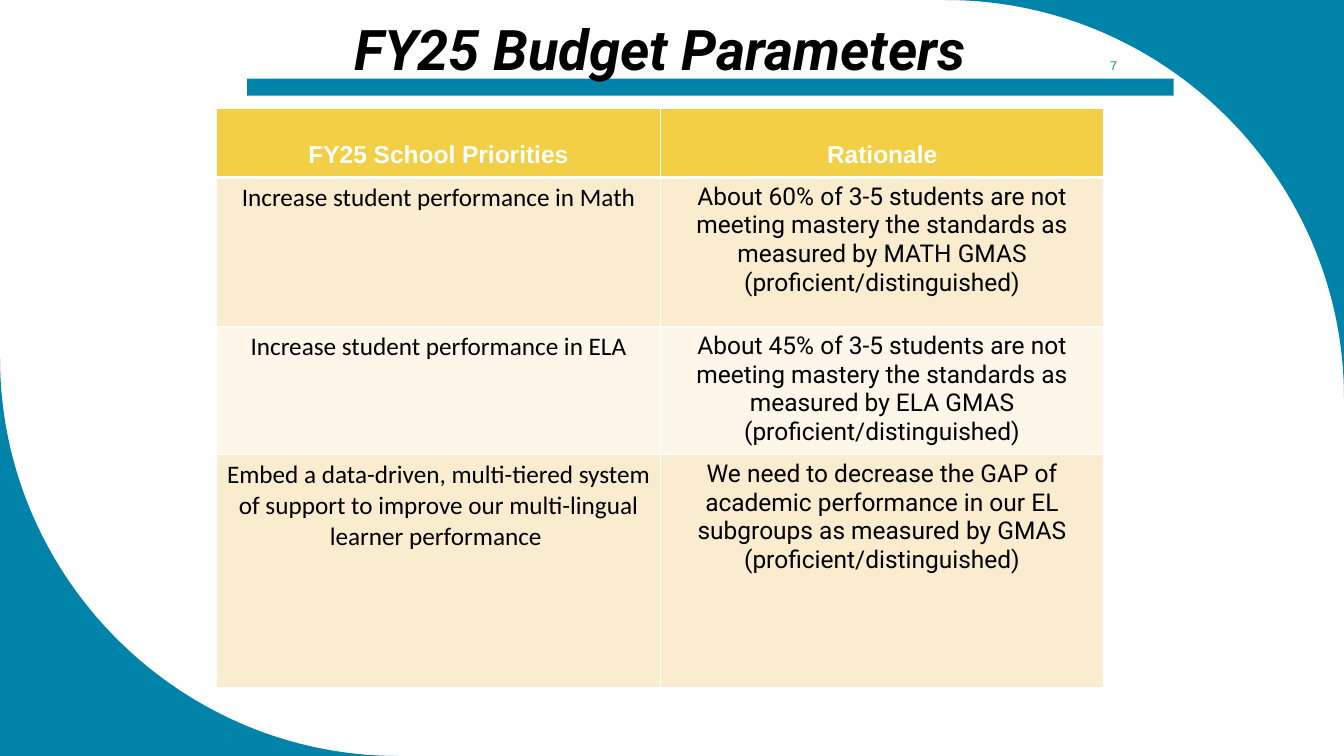
from lxml.etree import SubElement
from pptx import Presentation
from pptx.dml.color import RGBColor
from pptx.enum.shapes import MSO_SHAPE
from pptx.enum.text import MSO_ANCHOR, PP_ALIGN
from pptx.oxml.ns import qn
from pptx.util import Inches, Pt

W, H = 13.33, 7.5
TEAL, GOLD, GREEN = "0083A9", "F3CF45", "159839"
CREAM, PALE = "FAEDCF", "FDF6E9"
WHITE, BLACK = "FFFFFF", "000000"
CORNER_RADIUS = 3.95
ARC_PULL = 0.55  # share of the radius from an arc's end to its control point

COLUMN_WIDTH = 4.4
ROW_HEIGHTS = (0.68, 1.48, 1.27, 2.31)
HEADINGS = ("FY25 School Priorities", "Rationale")
PRIORITIES = (
    ("Increase student performance in Math",
     "About 60% of 3-5 students are not meeting mastery the standards "
     "as measured by MATH GMAS (proficient/distinguished)"),
    ("Increase student performance in ELA",
     "About 45% of 3-5 students are not meeting mastery the standards "
     "as measured by ELA GMAS (proficient/distinguished)"),
    ("Embed a data-driven, multi-tiered system of support to improve our "
     "multi-lingual learner performance ",
     "We need to decrease the GAP of academic performance in our EL "
     "subgroups as measured by GMAS (proficient/distinguished)"),
)


def rgb(color):
    return RGBColor.from_string(color)


def paint(sp, color):
    sp.shadow.inherit = False
    sp.fill.solid()
    sp.fill.fore_color.rgb = rgb(color)
    sp.line.fill.background()


def write(tf, text, font, size, color, bold=False, italic=False):
    p = tf.paragraphs[0]
    p.text = text
    p.alignment = PP_ALIGN.CENTER
    f = p.font
    f.name, f.size, f.bold, f.italic = font, Pt(size), bold, italic
    f.color.rgb = rgb(color)


def add_corner(slide, x, y, dx, dy):
    """Fill the area between the slide corner (x, y) and a quarter circle."""
    corner = Inches(x), Inches(y)
    radius = Inches(CORNER_RADIUS)
    ends = [(corner[0] + dx * radius, corner[1]),
            (corner[0], corner[1] + dy * radius)]
    builder = slide.shapes.build_freeform(*corner)
    builder.add_line_segments(ends, close=True)
    sp = builder.convert_to_shape()
    paint(sp, TEAL)

    outline = sp._element.find(".//" + qn("a:path"))
    k, start, end = [(int(pt.get("x")), int(pt.get("y")))
                     for pt in outline.iter(qn("a:pt"))][:3]
    pulls = [tuple(round(a + ARC_PULL * (b - a)) for a, b in zip(pt, k))
             for pt in (start, end)]
    chord = outline.findall(qn("a:lnTo"))[1]
    curve = outline.makeelement(qn("a:cubicBezTo"), {})
    for px, py in (*pulls, end):
        SubElement(curve, qn("a:pt"), x=str(px), y=str(py))
    outline.replace(chord, curve)


def add_text(slide, box, text, anchor, *style, **emphasis):
    tf = slide.shapes.add_textbox(*map(Inches, box)).text_frame
    tf.word_wrap = True
    tf.vertical_anchor = anchor
    write(tf, text, *style, **emphasis)


def add_borders(cell, top, bottom):
    tc_pr = cell._tc.get_or_add_tcPr()
    sides = (("lnL", 1), ("lnR", 1), ("lnT", top), ("lnB", bottom))
    for i, (side, width) in enumerate(sides):
        ln = tc_pr.makeelement(qn(f"a:{side}"), {"w": str(Pt(width))})
        fill = SubElement(ln, qn("a:solidFill"))
        SubElement(fill, qn("a:srgbClr"), val=WHITE)
        tc_pr.insert(i, ln)


def fill_cell(cell, color, text, *style, bold=False, top=1, bottom=1):
    cell.fill.solid()
    cell.fill.fore_color.rgb = rgb(color)
    write(cell.text_frame, text, *style, bold=bold)
    add_borders(cell, top, bottom)


def add_priorities(slide, left, top):
    table = slide.shapes.add_table(
        len(ROW_HEIGHTS), len(HEADINGS), Inches(left), Inches(top),
        Inches(COLUMN_WIDTH * len(HEADINGS)), Inches(sum(ROW_HEIGHTS))).table
    for row, height in zip(table.rows, ROW_HEIGHTS):
        row.height = Inches(height)
    for c, heading in enumerate(HEADINGS):
        cell = table.cell(0, c)
        fill_cell(cell, GOLD, heading, "Arial", 17.5, WHITE, bold=True, bottom=3)
        cell.vertical_anchor = MSO_ANCHOR.BOTTOM
        cell.margin_bottom = Inches(0.09)
    styles = (("Calibri", 18, BLACK), ("Roboto", 17.5, BLACK))
    for r, texts in enumerate(PRIORITIES, 1):
        band = CREAM if r % 2 else PALE
        for c, (text, style) in enumerate(zip(texts, styles)):
            fill_cell(table.cell(r, c), band, text, *style,
                      top=3 if r == 1 else 1)


def main():
    prs = Presentation()
    prs.slide_width, prs.slide_height = Inches(W), Inches(H)
    slide = prs.slides.add_slide(prs.slide_layouts[6])

    add_corner(slide, W, 0, -1, 1)
    add_corner(slide, 0, H, 1, -1)
    rule = slide.shapes.add_shape(
        MSO_SHAPE.RECTANGLE, *map(Inches, (2.45, 0.78, 9.19, 0.17)))
    paint(rule, TEAL)
    add_text(slide, (3.05, 0.09, 6.99, 0.77), "FY25 Budget Parameters",
             MSO_ANCHOR.TOP, "Roboto", 40, BLACK, bold=True, italic=True)
    add_priorities(slide, 2.15, 1.08)
    add_text(slide, (10.64, 0.5, 0.81, 0.3), "7",
             MSO_ANCHOR.MIDDLE, "Arial", 9, GREEN)

    prs.save("out.pptx")


if __name__ == "__main__":
    main()
